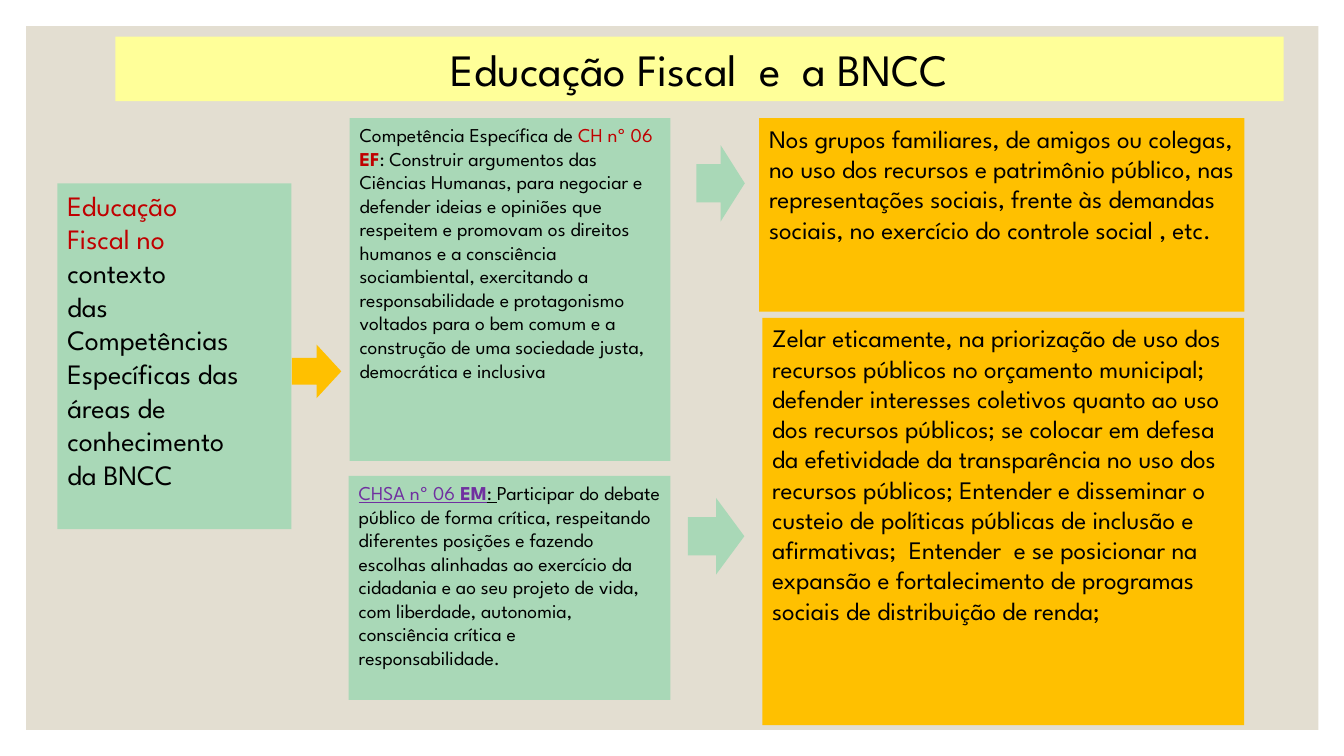
from dataclasses import dataclass

from pptx import Presentation
from pptx import util as u
from pptx.dml.color import RGBColor
from pptx.enum import shapes, text


@dataclass(frozen=True)
class Theme:
    font: str = "League Spartan"
    backdrop: str = "E3DED1"
    green: str = "A9D8B7"
    amber: str = "FFC000"
    yellow: str = "FFFF99"
    black: str = "000000"
    red: str = "C00000"
    purple: str = "7030A0"
    title: int = 32
    context: int = 20
    outcome: int = 18
    competence: int = 14


THEME = Theme()


def add_filled(page, kind, place, color):
    """Add a flat shape; place is left, top, width, height in points."""
    box = page.shapes.add_shape(kind, *(u.Pt(length) for length in place))
    box.shadow.inherit = False
    box.fill.solid()
    box.fill.fore_color.rgb = RGBColor.from_string(color)
    box.line.fill.background()
    return box


def add_panel(page, place, color):
    return add_filled(page, shapes.MSO_SHAPE.RECTANGLE, place, color)


def add_arrow(page, place, color):
    return add_filled(page, shapes.MSO_SHAPE.RIGHT_ARROW, place, color)


def add_text_panel(page, place, color, size, paragraphs,
                   align=text.PP_ALIGN.LEFT):
    """Each paragraph is a list of (wording, color, bold, underline) spans."""
    frame = add_panel(page, place, color).text_frame
    frame.word_wrap = True
    frame.vertical_anchor = text.MSO_ANCHOR.TOP
    for index, spans in enumerate(paragraphs):
        para = frame.add_paragraph() if index else frame.paragraphs[0]
        para.alignment = align
        for wording, ink, bold, underline in spans:
            span = para.add_run()
            span.text = wording
            span.font.name = THEME.font
            span.font.size = u.Pt(size)
            span.font.bold = bold
            span.font.underline = underline
            span.font.color.rgb = RGBColor.from_string(ink)


def plain(wording, color=THEME.black):
    return [(wording, color, False, False)]


def main():
    deck = Presentation()
    deck.slide_width, deck.slide_height = u.Pt(960), u.Pt(540)
    page = deck.slides.add_slide(deck.slide_layouts[6])

    # Backdrop and title
    add_panel(page, (18.7, 18.7, 923, 502.6), THEME.backdrop)
    add_text_panel(page, (82.5, 26.2, 834.5, 46), THEME.yellow, THEME.title,
                   [plain("Educação Fiscal  e  a BNCC")],
                   text.PP_ALIGN.CENTER)

    # Context
    add_text_panel(page, (41, 131, 167.2, 247), THEME.green, THEME.context, [
        plain("Educação", THEME.red),
        plain("Fiscal no", THEME.red),
        plain("contexto"),
        plain("das"),
        plain("Competências Específicas das áreas de conhecimento"),
        plain("da BNCC"),
    ])

    # Specific competences
    add_text_panel(
        page, (249.8, 84.4, 229, 244.8), THEME.green, THEME.competence, [[
            ("Competência Específica de ", THEME.black, False, False),
            ("CH nº 06 ", THEME.red, False, False),
            ("EF", THEME.red, True, False),
            (": Construir argumentos das Ciências Humanas, para negociar e "
             "defender ideias e opiniões que respeitem e promovam os direitos "
             "humanos e a consciência sociambiental, exercitando a "
             "responsabilidade e protagonismo voltados para o bem comum e a "
             "construção de uma sociedade justa, democrática e inclusiva",
             THEME.black, False, False),
        ]])
    add_text_panel(
        page, (249.1, 340, 229.7, 160), THEME.green, THEME.competence, [[
            ("CHSA nº 06 ", THEME.purple, False, True),
            ("EM", THEME.purple, True, True),
            (": ", THEME.black, False, True),
            ("Participar do debate público de forma crítica, respeitando "
             "diferentes posições e fazendo escolhas alinhadas ao exercício "
             "da cidadania e ao seu projeto de vida, com liberdade, "
             "autonomia, consciência crítica e responsabilidade.",
             THEME.black, False, False),
        ]])

    # Outcomes
    add_text_panel(
        page, (542.2, 84.4, 346.6, 138.2), THEME.amber, THEME.outcome,
        [plain("Nos grupos familiares, de amigos ou colegas, no uso dos "
               "recursos e patrimônio público, nas representações sociais, "
               "frente às demandas sociais, no exercício do controle "
               "social , etc.")])
    add_text_panel(
        page, (544.5, 227, 344.3, 291), THEME.amber, THEME.outcome,
        [plain("Zelar eticamente, na priorização de uso dos recursos públicos "
               "no orçamento municipal; defender interesses coletivos quanto "
               "ao uso dos recursos públicos; se colocar em defesa da "
               "efetividade da transparência no uso dos recursos públicos; "
               "Entender e disseminar o custeio de políticas públicas de "
               "inclusão e afirmativas;  Entender  e se posicionar na "
               "expansão e fortalecimento de programas sociais de "
               "distribuição de renda;")])

    # Arrows from context to competences to outcomes
    add_arrow(page, (208.6, 246.2, 35.2, 38.2), THEME.amber)
    add_arrow(page, (497.4, 103.6, 34.6, 54.7), THEME.green)
    add_arrow(page, (491.3, 355.7, 40.4, 54.7), THEME.green)

    deck.save("out.pptx")


if __name__ == "__main__":
    main()
